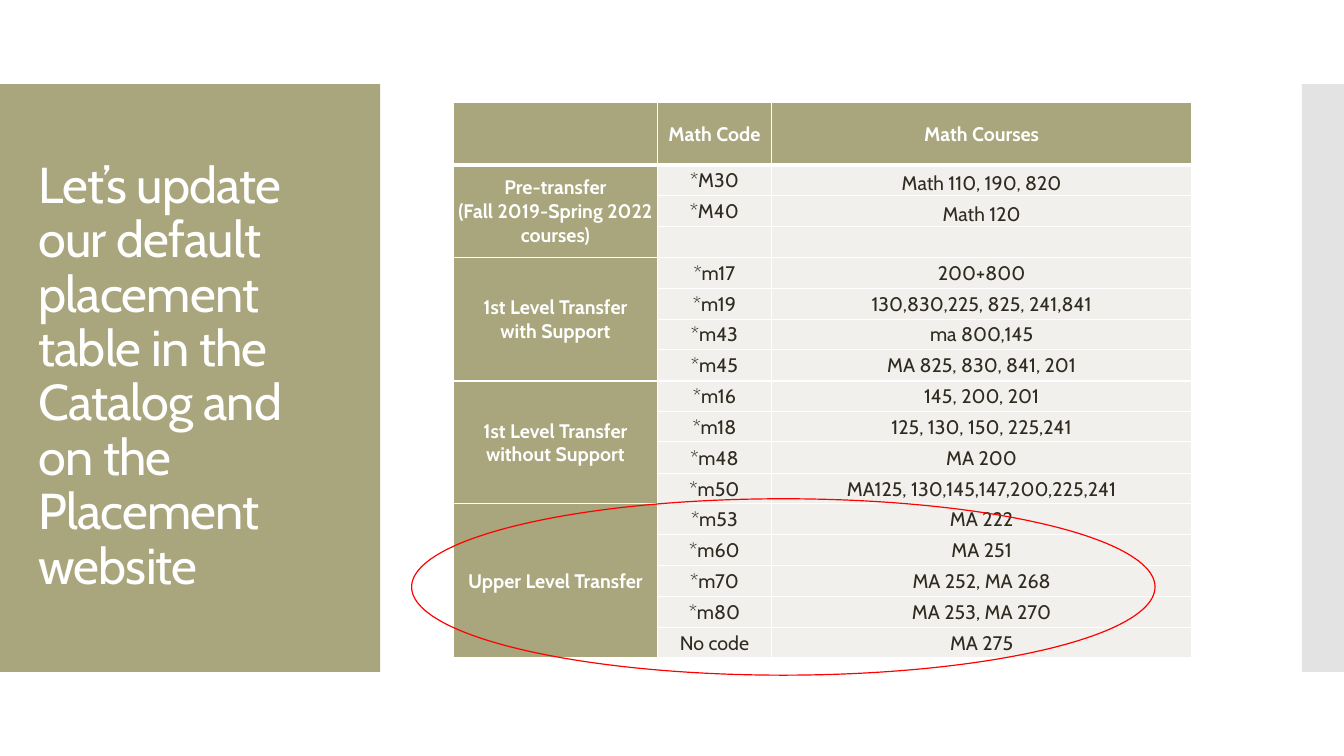
from lxml.etree import SubElement
from pptx import Presentation
from pptx.dml.color import RGBColor
from pptx.enum.shapes import MSO_SHAPE as Preset
from pptx.enum.text import MSO_ANCHOR as Anchor, MSO_AUTO_SIZE as AutoSize, PP_ALIGN as Align
from pptx.oxml.ns import qn
from pptx.util import Pt

FONT = "Cabin"
OLIVE, PALE, INK, WHITE = "A9A57C", "F1F0EC", "2F2B20", "FFFFFF"
HEADINGS = ["", "Math Code", "Math Courses"]
LEVELS = [
    ("Pre-transfer\n(Fall 2019-Spring 2022 courses)", [
        ("*M30", "Math 110, 190, 820"),
        ("*M40", "Math 120"),
        ("", ""),
    ]),
    ("1st Level Transfer\nwith Support", [
        ("*m17", "200+800"),
        ("*m19", "130,830,225, 825, 241,841"),
        ("*m43", "ma 800,145"),
        ("*m45", "MA 825, 830, 841, 201"),
    ]),
    ("1st Level Transfer without Support", [
        ("*m16", "145, 200, 201"),
        ("*m18", "125, 130, 150, 225,241"),
        ("*m48", "MA 200"),
        ("*m50", "MA125, 130,145,147,200,225,241"),
    ]),
    ("Upper Level Transfer", [
        ("*m53", "MA 222"),
        ("*m60", "MA 251"),
        ("*m70", "MA 252, MA 268"),
        ("*m80", "MA 253, MA 270"),
        ("No code", "MA 275"),
    ]),
]


def px(length):
    return length * 9525


def color(value):
    return RGBColor.from_string(value)


def format_run(run, size, value, bold=False):
    run.font.name = FONT
    run.font.size = Pt(size)
    run.font.bold = bold
    run.font.color.rgb = color(value)


def add_bar(slide, box, value, opacity=100):
    bar = slide.shapes.add_shape(Preset.RECTANGLE, *map(px, box))
    bar.shadow.inherit = False
    bar.line.fill.background()
    bar.fill.solid()
    bar.fill.fore_color.rgb = color(value)
    if opacity < 100:
        fill_color = next(bar.element.iter(qn("a:srgbClr")))
        SubElement(fill_color, qn("a:alpha"), val=str(opacity * 1000))
    return bar


def add_title_panel(slide, box):
    left, top, width, height = box
    panel = add_bar(slide, box, OLIVE)
    title = slide.shapes.title
    panel.element.addnext(title.element)
    title.left, title.top = px(left + 27), px(top + 38)
    title.width, title.height = px(width - 53), px(height - 77)
    frame = title.text_frame
    frame.text = "Let’s update our default placement table in the Catalog and on the Placement website"
    frame.word_wrap = True
    frame.auto_size = AutoSize.NONE
    frame.vertical_anchor = Anchor.MIDDLE
    paragraph = frame.paragraphs[0]
    paragraph.alignment = Align.LEFT
    paragraph.line_spacing = 0.9
    run = paragraph.runs[0]
    format_run(run, 36, WHITE)
    run.font._element.set("spc", "-60")


def add_borders(cell, top, bottom):
    properties = cell._tc.get_or_add_tcPr()
    for side, points in (("L", 1), ("R", 1), ("T", top), ("B", bottom)):
        line = SubElement(properties, qn("a:ln" + side), w=str(Pt(points)))
        fill = SubElement(line, qn("a:solidFill"))
        SubElement(fill, qn("a:srgbClr"), val=WHITE)


def format_cell(cell, is_label, top=1, bottom=1):
    add_borders(cell, top, bottom)
    cell.fill.solid()
    cell.fill.fore_color.rgb = color(OLIVE if is_label else PALE)
    cell.margin_left = cell.margin_right = cell.margin_top = px(1)
    cell.margin_bottom = 0
    cell.vertical_anchor = Anchor.MIDDLE
    for paragraph in cell.text_frame.paragraphs:
        paragraph.alignment = Align.CENTER
        for run in paragraph.runs:
            format_run(run, 14, WHITE if is_label else INK, is_label)
        if not paragraph.runs:
            SubElement(paragraph._p, qn("a:endParaRPr"), sz="1400")


def add_placement_table(slide, box):
    header_height = 59
    rows = [HEADINGS]
    spans = []
    for label, courses in LEVELS:
        spans.append((len(rows), len(rows) + len(courses) - 1))
        for index, (code, names) in enumerate(courses):
            rows.append([label if index == 0 else "", code, names])

    table = slide.shapes.add_table(len(rows), len(HEADINGS), *map(px, box)).table
    for column, width in zip(table.columns, (194, 109, box[2] - 303)):
        column.width = px(width)
    pitch = (box[3] - header_height) / (len(rows) - 1)
    for row, values in enumerate(rows):
        height = header_height if row == 0 else round(row * pitch) - round((row - 1) * pitch)
        table.rows[row].height = px(height)
        for column, value in enumerate(values):
            cell = table.cell(row, column)
            cell.text_frame.text = value
            format_cell(cell, row == 0 or column == 0,
                        top=3 if row == 1 else 1, bottom=3 if row == 0 else 1)
    for first, last in spans:
        table.cell(first, 0).merge(table.cell(last, 0))
    for row in (1, 2):
        table.cell(row, 2).vertical_anchor = Anchor.BOTTOM


def add_highlight(slide, box):
    ellipse = slide.shapes.add_shape(Preset.OVAL, *map(px, box))
    ellipse.shadow.inherit = False
    ellipse.fill.background()
    ellipse.line.color.rgb = color("FF0000")
    ellipse.line.width = Pt(0.85)


def main():
    presentation = Presentation()
    presentation.slide_width, presentation.slide_height = px(1280), px(720)
    slide = presentation.slides.add_slide(presentation.slide_layouts[5])
    add_title_panel(slide, (0, 80, 362, 560))
    add_bar(slide, (1240, 80, 40, 560), "C8C8C8", opacity=50)
    add_placement_table(slide, (432, 98, 703, 529))
    add_highlight(slide, (392, 475, 708, 168))
    presentation.save("out.pptx")


if __name__ == "__main__":
    main()
